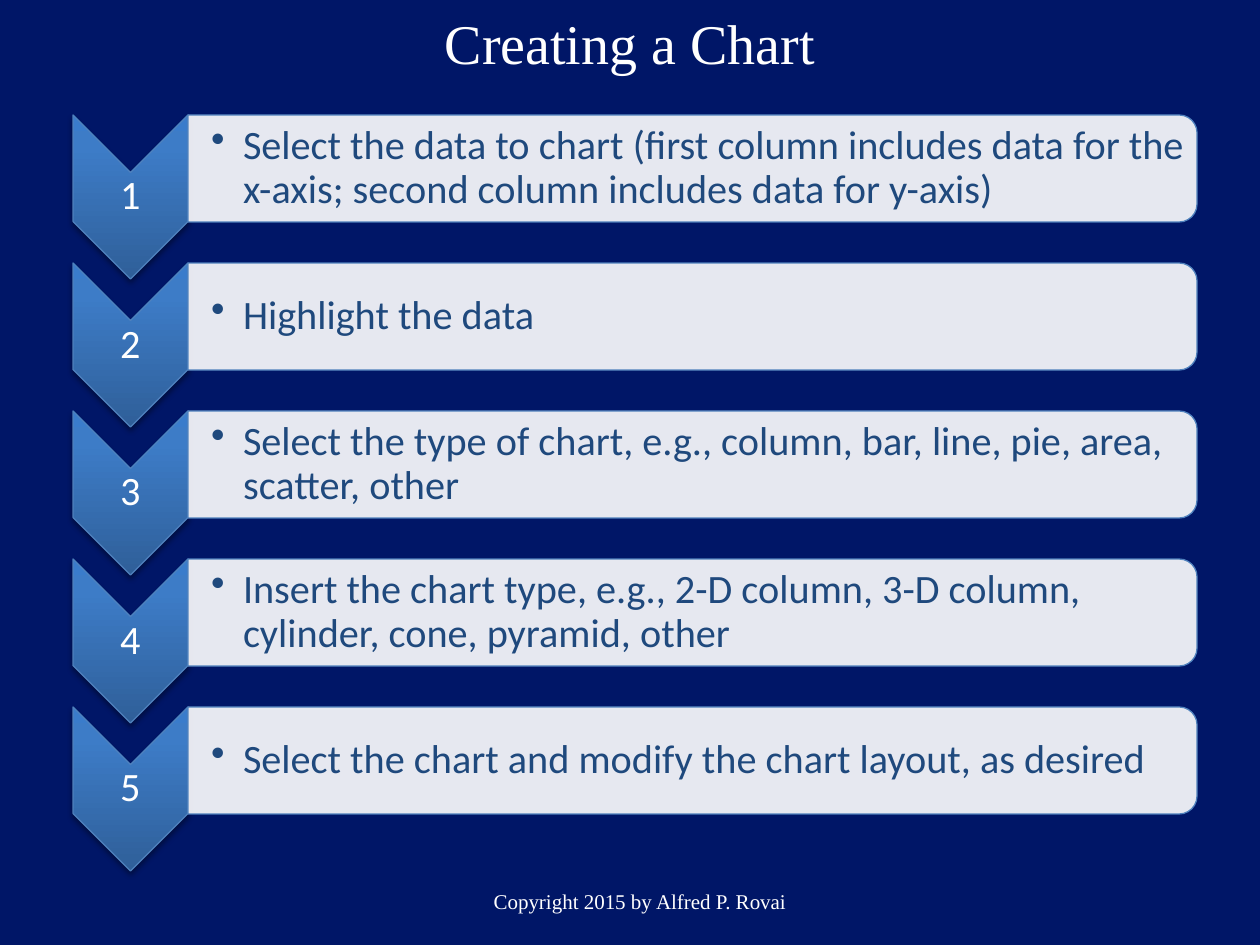
import pptx
import pptx.util
import pptx.dml.color
import pptx.enum.shapes
import pptx.enum.text
import pptx.oxml
import pptx.oxml.ns

# Content
TITLE = "Creating a Chart"
STEPS = [
    "Select the data to chart (first column includes data for the x-axis; "
    "second column includes data for y-axis)",
    "Highlight the data",
    "Select the type of chart, e.g., column, bar, line, pie, area, scatter, other",
    "Insert the chart type, e.g., 2-D column, 3-D column, cylinder, cone, pyramid, other",
    "Select the chart and modify the chart layout, as desired",
]
FOOTER = "Copyright 2015 by Alfred P. Rovai"

# Layout in px, 126 to the inch
TOP, PITCH = 115, 148
ARROW_X, ARROW_W, ARROW_H = 73, 115, 164
BOX_X, BOX_W, BOX_H = 188, 1009, 107
INSET = 2

NAVY, WHITE, BLUE, TEXT_BLUE = "001667", "FFFFFF", "4F81BD", "1F497D"
SERIF, SANS = "Times New Roman", "Calibri"
GRADIENT = [(0, "2F5F99"), (80, "3D7CC7"), (100, "3A7CCB")]

SHAPE = pptx.enum.shapes.MSO_SHAPE
ALIGN = pptx.enum.text.PP_ALIGN
NS = pptx.oxml.ns.nsdecls("a")


def px(n):
    return round(n * 914400 / 126)


def rgb(color):
    return pptx.dml.color.RGBColor.from_string(color)


def write(s, text, size, font, color, align=ALIGN.CENTER, left=INSET, bullet=False,
          spacing=None):
    tf = s.text_frame
    tf.word_wrap = True
    tf.auto_size = pptx.enum.text.MSO_AUTO_SIZE.NONE
    tf.vertical_anchor = pptx.enum.text.MSO_ANCHOR.MIDDLE
    tf.margin_left = px(left)
    tf.margin_top = tf.margin_right = tf.margin_bottom = px(INSET)
    p = tf.paragraphs[0]
    p.alignment = align
    if spacing:
        p.line_spacing = spacing
    if bullet:
        pPr = p._p.get_or_add_pPr()
        pPr.set("marL", str(px(32)))
        pPr.set("indent", str(-px(32)))
        pPr.append(pptx.oxml.parse_xml(f'<a:buChar {NS} char="•"/>'))
    r = p.add_run()
    r.text = text
    r.font.size = pptx.util.Pt(size)
    r.font.name = font
    r.font.color.rgb = rgb(color)


def text_box(slide, x, y, w, h, text, size, font, color, **fmt):
    s = slide.shapes.add_textbox(px(x), px(y), px(w), px(h))
    write(s, text, size, font, color, **fmt)


def turned_shape(slide, kind, x, y, w, h):
    """Add a shape turned a quarter that covers x, y, w, h on the slide."""
    s = slide.shapes.add_shape(kind, px(x + (w - h) / 2), px(y + (h - w) / 2), px(h), px(w))
    s.rotation = 90
    s.shadow.inherit = False
    s.line.color.rgb = rgb(BLUE)
    s.line.width = pptx.util.Pt(0.75)
    return s


def add_box(slide, y):
    s = turned_shape(slide, SHAPE.ROUND_2_SAME_RECTANGLE, BOX_X, y, BOX_W, BOX_H)
    s.fill.solid()
    s.fill.fore_color.rgb = rgb(WHITE)
    color = s._element.spPr.find(".//" + pptx.oxml.ns.qn("a:srgbClr"))
    color.append(pptx.oxml.parse_xml(f'<a:alpha {NS} val="90000"/>'))


def add_arrow(slide, y):
    s = turned_shape(slide, SHAPE.CHEVRON, ARROW_X, y, ARROW_W, ARROW_H)
    spPr = s._element.spPr
    # Gradient stays upright while the shape is turned
    stops = "".join(f'<a:gs pos="{pos * 1000}"><a:srgbClr val="{c}"/></a:gs>'
                    for pos, c in GRADIENT)
    spPr.insert(2, pptx.oxml.parse_xml(
        f'<a:gradFill {NS} rotWithShape="0"><a:gsLst>{stops}</a:gsLst>'
        '<a:lin ang="16200000" scaled="0"/></a:gradFill>'))
    # Soft shadow below
    spPr.find(pptx.oxml.ns.qn("a:effectLst")).append(pptx.oxml.parse_xml(
        f'<a:outerShdw {NS} blurRad="{pptx.util.Pt(3.1)}" dist="{pptx.util.Pt(1.8)}" '
        'dir="5400000" rotWithShape="0"><a:srgbClr val="000000">'
        '<a:alpha val="35000"/></a:srgbClr></a:outerShdw>'))


def main():
    prs = pptx.Presentation()
    prs.slide_width, prs.slide_height = px(1260), px(945)
    slide = prs.slides.add_slide(prs.slide_layouts[5])
    slide.background.fill.solid()
    slide.background.fill.fore_color.rgb = rgb(NAVY)

    # Title and footer
    title = slide.shapes.title
    title.left, title.top, title.width, title.height = px(63), px(0), px(1134), px(84)
    write(title, TITLE, 32, SERIF, WHITE)
    text_box(slide, 220, 876, 840, 50, FOOTER, 12, SERIF, WHITE)

    # Numbered steps
    for i, step in enumerate(STEPS):
        y = TOP + i * PITCH
        add_arrow(slide, y)
        text_box(slide, ARROW_X, y + 57, ARROW_W, 50, str(i + 1), 23, SANS, WHITE,
                 spacing=0.9)
        add_box(slide, y)
        text_box(slide, BOX_X, y + 5, BOX_W - 6, 97, step, 23, SANS, TEXT_BLUE,
                 align=ALIGN.LEFT, left=23, bullet=True, spacing=0.9)

    prs.save("out.pptx")


if __name__ == "__main__":
    main()
